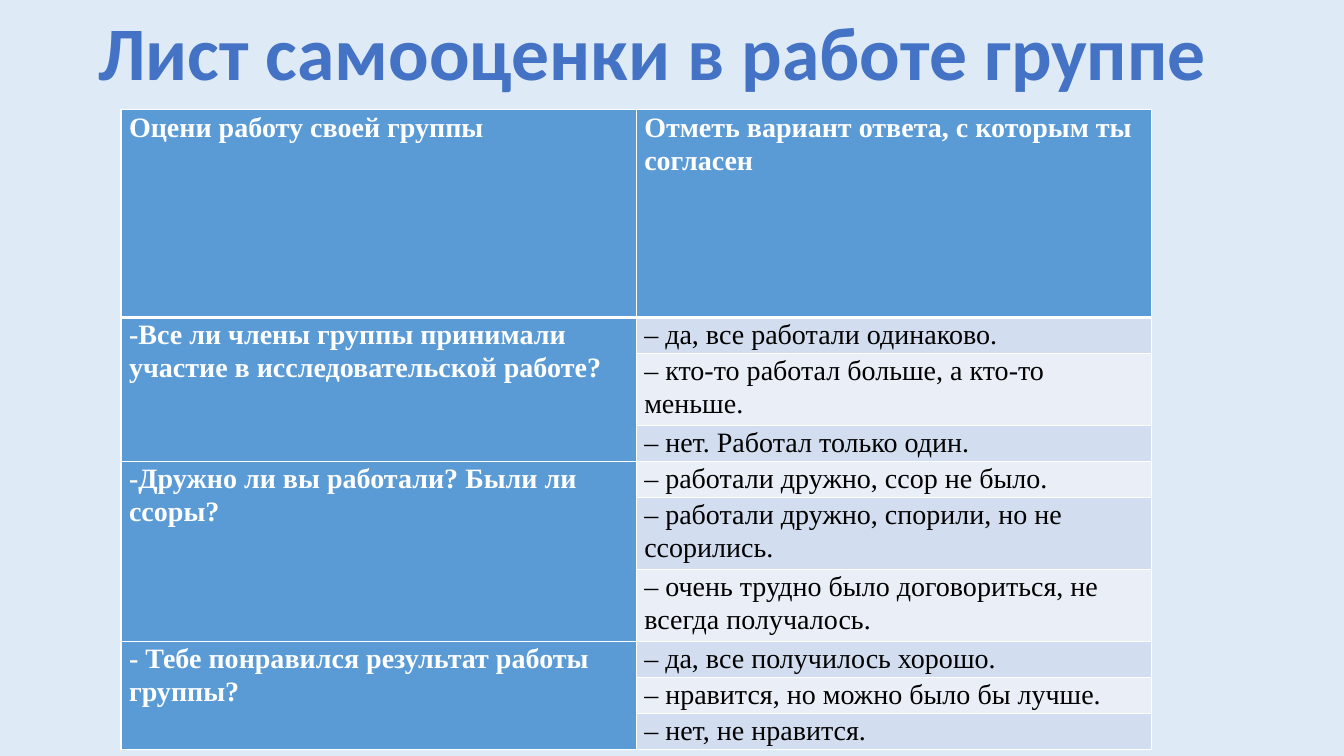
from lxml import etree
from pptx import Presentation
from pptx import util as u
from pptx.dml.color import RGBColor
from pptx.enum import text
from pptx.oxml.ns import qn

COLOURS = {
    "background": "DEEBF7",
    "title": "4472C4",
    "header": "5B9BD5",
    "odd": "D2DEEF",
    "even": "EAEFF7",
    "white": "FFFFFF",
    "black": "000000",
}

HEADINGS = ["Оцени работу своей группы", "Отметь вариант ответа, с которым ты согласен"]
QUESTIONS = {
    "-Все ли члены группы принимали участие в исследовательской работе?": [
        "– да, все работали одинаково.",
        "– кто-то работал больше, а кто-то меньше.",
        "– нет. Работал только один.",
    ],
    "-Дружно ли вы работали? Были ли ссоры?": [
        "– работали дружно, ссор не было.",
        "– работали дружно, спорили, но не ссорились.",
        "– очень трудно было договориться, не всегда получалось.",
    ],
    "- Тебе понравился результат работы группы?": [
        "– да, все получилось хорошо.",
        "– нравится, но можно было бы лучше.",
        "– нет, не нравится.",
    ],
}
ROW_HEIGHTS = [2.06] + [0.21] * 5 + [0.44] + [0.21] * 3


def colour(name):
    return RGBColor.from_string(COLOURS[name])


def write(frame, content, *, font, size, ink, bold=False, align=None, spacing=None, after=None):
    para = frame.paragraphs[0]
    para.alignment = align
    para.line_spacing = spacing
    if after is not None:
        para.space_after = u.Pt(after)
    span = para.add_run()
    span.text = content
    span.font.name = font
    span.font.size = u.Pt(size)
    span.font.bold = bold
    span.font.color.rgb = colour(ink)
    return span


def add_line(parent, tag, width, ink):
    line = etree.SubElement(parent, qn(tag), w=str(u.Pt(width)))
    fill = etree.SubElement(line, qn("a:solidFill"))
    etree.SubElement(fill, qn("a:srgbClr"), val=COLOURS[ink])
    return line


class Sheet:
    def __init__(self, deck):
        self.page = deck.slides.add_slide(deck.slide_layouts[5])
        self.page.background.fill.solid()
        self.page.background.fill.fore_color.rgb = colour("background")

    def title(self, content, left, top, width, height):
        box = self.page.shapes.title
        box.left, box.top = u.Inches(left), u.Inches(top)
        box.width, box.height = u.Inches(width), u.Inches(height)
        frame = box.text_frame
        frame.word_wrap = False
        frame.auto_size = text.MSO_AUTO_SIZE.SHAPE_TO_FIT_TEXT
        frame.vertical_anchor = text.MSO_ANCHOR.TOP
        span = write(frame, content, font="Calibri", size=54, ink="title", bold=True,
                     align=text.PP_ALIGN.CENTER)
        properties = span.font._element
        properties.insert(0, add_line(properties, "a:ln", 0.75, "white"))

    def cell(self, cell, content, fill, ink, bold, bottom=1):
        cell.margin_left = cell.margin_right = u.Inches(0.08)
        cell.margin_top = cell.margin_bottom = 0
        if content:
            write(cell.text_frame, content, font="Times New Roman", size=20,
                  ink=ink, bold=bold, spacing=1.07, after=7.5)
        properties = cell._tc.get_or_add_tcPr()
        for side, width in zip("LRTB", (1, 1, 1, bottom)):
            add_line(properties, f"a:ln{side}", width, "white")
        cell.fill.solid()
        cell.fill.fore_color.rgb = colour(fill)

    def table(self, headings, questions, heights, left, top, width):
        frame = self.page.shapes.add_table(
            len(heights), len(headings), u.Inches(left), u.Inches(top),
            u.Inches(width), u.Inches(sum(heights)))
        table = frame.table
        for row, height in zip(table.rows, heights):
            row.height = u.Inches(height)
        for column, heading in enumerate(headings):
            self.cell(table.cell(0, column), heading, "header", "white", True, bottom=3)
        row = 1
        for question, answers in questions.items():
            first = row
            for answer in answers:
                label = question if row == first else ""
                self.cell(table.cell(row, 0), label, "header", "white", True)
                band = "odd" if row % 2 else "even"
                self.cell(table.cell(row, 1), answer, band, "black", False)
                row += 1
            table.cell(first, 0).merge(table.cell(row - 1, 0))


def main():
    deck = Presentation()
    deck.slide_width, deck.slide_height = u.Inches(13.33), u.Inches(7.5)
    sheet = Sheet(deck)
    sheet.table(HEADINGS, QUESTIONS, ROW_HEIGHTS, 1.2, 1.09, 10.22)
    sheet.title("Лист самооценки в работе группе", 0.82, 0, 11.3, 1.01)
    deck.save("out.pptx")


if __name__ == "__main__":
    main()
